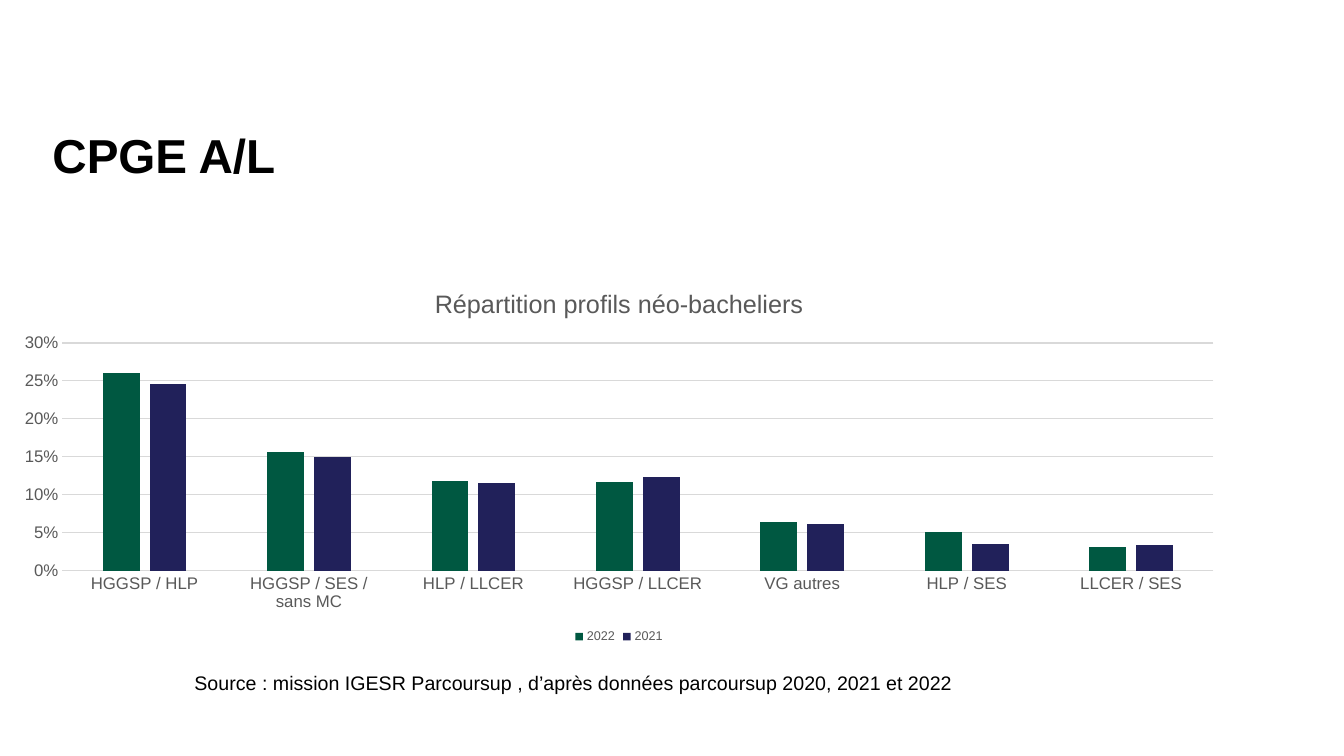
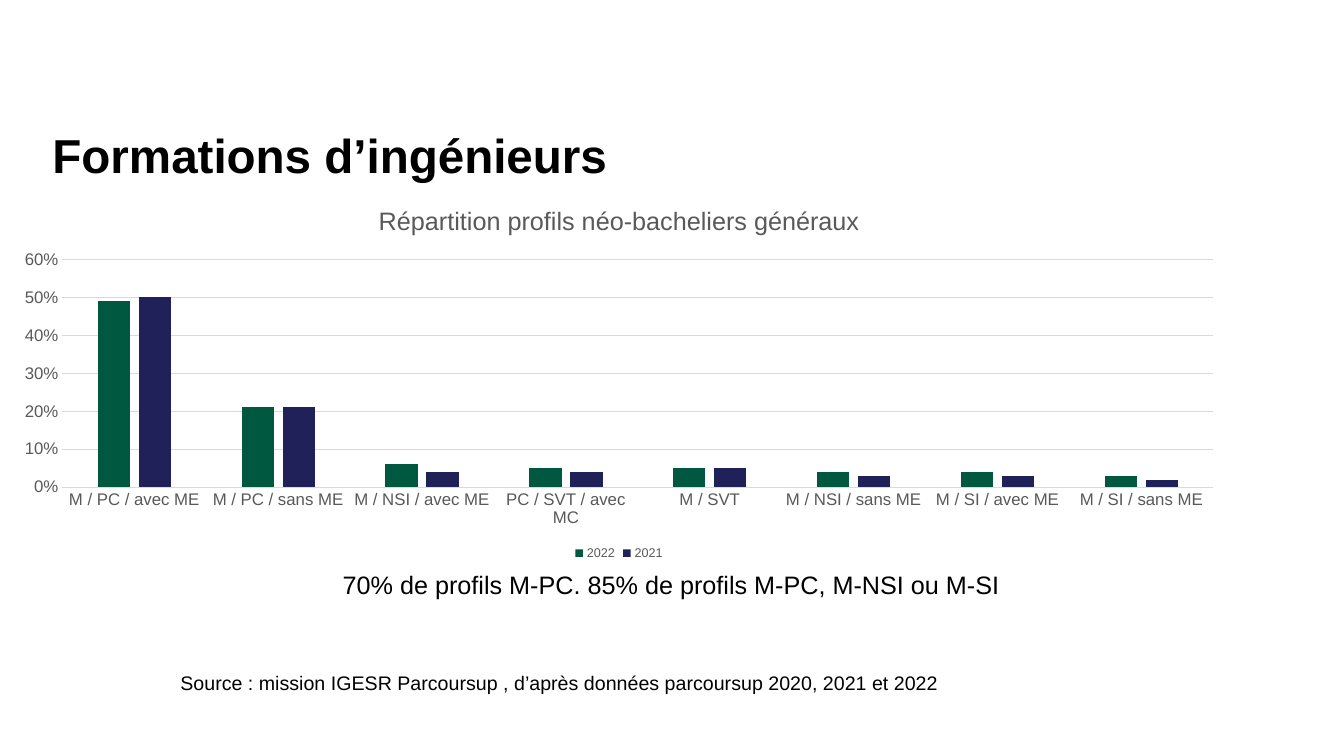
"""Build two slides comparing the 2022 and 2021 profiles of new students."""
from pptx import Presentation
from pptx.chart.data import CategoryChartData
from pptx.dml.color import RGBColor
from pptx.enum.chart import XL_CHART_TYPE, XL_LEGEND_POSITION, XL_TICK_MARK
from pptx.util import Inches, Pt

COLUMNS = XL_CHART_TYPE.COLUMN_CLUSTERED
BOTTOM = XL_LEGEND_POSITION.BOTTOM
NO_TICK = XL_TICK_MARK.NONE

FONT = "Arial"
BLACK, GREY, GRID = "000000", "595959", "D9D9D9"
SERIES_COLORS = {"2022": "005841", "2021": "21215A"}
WIDTH, HEIGHT = 13.33, 7.5
CONTENT_W = 12.28
CHART_H = HEIGHT / 2
SOURCE_TOP, SOURCE_RIGHT = 6.61, 9.67
SOURCE = "Source : mission IGESR Parcoursup , d’après données parcoursup 2020, 2021 et 2022"

SLIDES = [
    {
        "title": "CPGE A/L",
        "chart_title": "Répartition profils néo-bacheliers",
        "chart_top": 2.68,
        "scale": (0.3, 0.05),
        "source_left": 1.83,
        "rows": [
            ("HGGSP / HLP", 0.261, 0.246),
            ("HGGSP / SES / sans MC", 0.157, 0.15),
            ("HLP / LLCER", 0.118, 0.116),
            ("HGGSP / LLCER", 0.117, 0.124),
            ("VG autres", 0.064, 0.061),
            ("HLP / SES", 0.051, 0.035),
            ("LLCER / SES", 0.032, 0.034),
        ],
    },
    {
        "title": "Formations d’ingénieurs",
        "chart_title": "Répartition profils néo-bacheliers généraux",
        "chart_top": 1.85,
        "scale": (0.6, 0.1),
        "source_left": 1.69,
        "rows": [
            ("M / PC / avec ME", 0.49, 0.5),
            ("M / PC / sans ME", 0.21, 0.21),
            ("M / NSI / avec ME", 0.06, 0.04),
            ("PC / SVT / avec MC", 0.05, 0.04),
            ("M / SVT", 0.05, 0.05),
            ("M / NSI / sans ME", 0.04, 0.03),
            ("M / SI / avec ME", 0.04, 0.03),
            ("M / SI / sans ME", 0.03, 0.02),
        ],
        "remark": "70% de profils M-PC. 85% de profils M-PC, M-NSI ou M-SI",
    },
]


def rgb(color):
    return RGBColor.from_string(color)


def style_font(font, size, color, bold=False):
    font.name, font.size, font.bold = FONT, Pt(size), bold
    font.color.rgb = rgb(color)


def style_line(line, color):
    line.color.rgb = rgb(color)
    line.width = Pt(0.75)


def add_text(slide, text, box, size, bold=False):
    tf = slide.shapes.add_textbox(*map(Inches, box)).text_frame
    tf.word_wrap = True
    tf.text = text
    style_font(tf.paragraphs[0].runs[0].font, size, BLACK, bold)
    return tf


def add_title(slide, text):
    tf = add_text(slide, text, (0.52, 1.31, CONTENT_W, 1.05), 34, True)
    tf.margin_left = tf.margin_top = tf.margin_right = tf.margin_bottom = 0
    tf.paragraphs[0].line_spacing = 0.9


def add_profile_chart(slide, content):
    categories, *values = zip(*content["rows"])
    data = CategoryChartData(number_format="0%")
    data.categories = categories
    for name, vals in zip(SERIES_COLORS, values):
        data.add_series(name, vals)
    box = (0, content["chart_top"], CONTENT_W, CHART_H)
    chart = slide.shapes.add_chart(COLUMNS, *map(Inches, box), data).chart
    style_font(chart.font, 10, BLACK)

    chart.has_title = True
    tf = chart.chart_title.text_frame
    tf.text = content["chart_title"]
    style_font(tf.paragraphs[0].runs[0].font, 18, GREY)
    chart.chart_title.include_in_layout = False

    chart.has_legend = True
    chart.legend.position = BOTTOM
    chart.legend.include_in_layout = False
    style_font(chart.legend.font, 9, GREY)

    cat_axis, val_axis = chart.category_axis, chart.value_axis
    for axis in (cat_axis, val_axis):
        axis.major_tick_mark = axis.minor_tick_mark = NO_TICK
        style_font(axis.tick_labels.font, 12, GREY)
    style_line(cat_axis.format.line, GRID)
    val_axis.format.line.fill.background()
    val_axis.has_major_gridlines = True
    style_line(val_axis.major_gridlines.format.line, GRID)
    val_axis.minimum_scale = 0
    val_axis.maximum_scale, val_axis.major_unit = content["scale"]
    val_axis.tick_labels.number_format = "0%"
    val_axis.tick_labels.number_format_is_linked = False

    plot = chart.plots[0]
    plot.gap_width, plot.overlap = 219, -27
    plot.vary_by_categories = False
    for series in plot.series:
        series.format.fill.solid()
        series.format.fill.fore_color.rgb = rgb(SERIES_COLORS[series.name])


def build_slide(prs, content):
    slide = prs.slides.add_slide(prs.slide_layouts[6])
    add_title(slide, content["title"])
    add_profile_chart(slide, content)
    left = content["source_left"]
    add_text(slide, SOURCE, (left, SOURCE_TOP, SOURCE_RIGHT - left, 0.34), 14)
    if "remark" in content:
        remark_top = content["chart_top"] + CHART_H
        add_text(slide, content["remark"], (3.3, remark_top, 7.34, 0.4), 18)


def main():
    prs = Presentation()
    prs.slide_width, prs.slide_height = Inches(WIDTH), Inches(HEIGHT)
    for content in SLIDES:
        build_slide(prs, content)
    prs.save("out.pptx")


if __name__ == "__main__":
    main()
